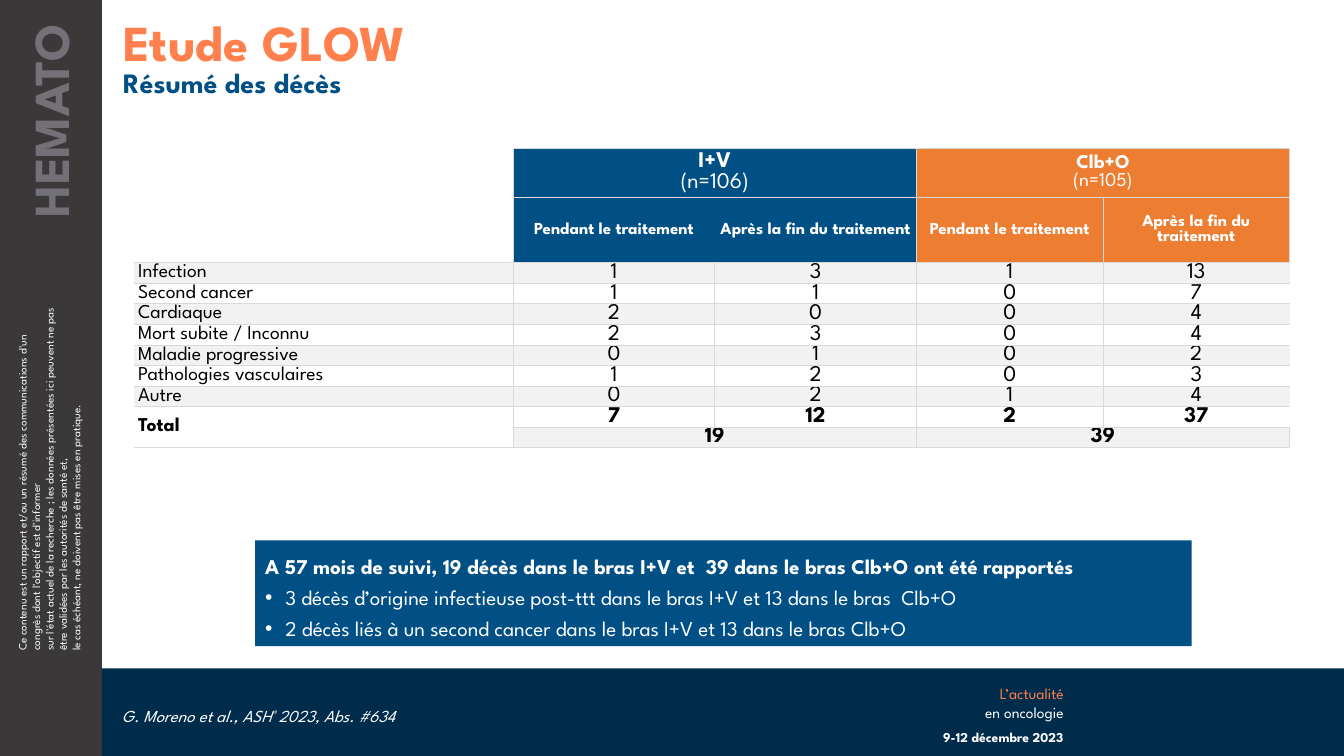
from dataclasses import dataclass
from typing import Optional

from lxml.etree import SubElement
from pptx import Presentation
from pptx.dml.color import RGBColor
from pptx.enum.shapes import MSO_SHAPE
from pptx.enum.text import MSO_ANCHOR, MSO_AUTO_SIZE, PP_ALIGN
from pptx.oxml import parse_xml
from pptx.oxml.ns import nsdecls, qn
from pptx.util import Inches, Pt


@dataclass(frozen=True)
class Theme:
    font: str = "League Spartan"
    white: str = "FFFFFF"
    black: str = "000000"
    coral: str = "FF7F4D"
    blue: str = "005086"
    orange: str = "ED7D31"
    navy: str = "002C4C"
    charcoal: str = "3A3839"
    gray: str = "737078"
    band: str = "F2F2F2"
    rule: str = "D9D9D9"
    title: float = 36
    subtitle: float = 20
    figure: float = 16
    callout: float = 15
    label: float = 14
    small: float = 12
    tagline: float = 11
    date: float = 9.7
    legal: float = 8


THEME = Theme()


@dataclass(frozen=True)
class Span:
    text: str
    size: float
    color: str = THEME.white
    bold: bool = False
    italic: bool = False
    raised: bool = False


@dataclass(frozen=True)
class Para:
    spans: tuple[Span, ...]
    align: PP_ALIGN = PP_ALIGN.LEFT
    spacing: float = 1.0
    before: float = 0
    bullet: bool = False


@dataclass(frozen=True)
class Block:
    box: tuple[float, float, float, float]
    paras: tuple[Para, ...]
    insets: tuple[float, float, float, float] = (0.1, 0.05, 0.1, 0.05)
    placeholder: Optional[int] = None
    rotation: float = 0
    fill: Optional[str] = None
    anchor: MSO_ANCHOR = MSO_ANCHOR.TOP


@dataclass(frozen=True)
class Arm:
    name: str
    patients: str
    color: str
    name_size: float
    column: int


BANDS = (((1.01, 6.63, 12.32, 0.87), THEME.navy), ((0, 0, 1.01, 7.5), THEME.charcoal))
LEGAL = ("Ce contenu est un rapport et/ou un résumé des communications d'un congrès dont l'objectif est d'informer \n"
         "sur l'état actuel de la recherche ; les données présentées ici peuvent ne pas être validées "
         "par les autorités de santé et, \n"
         "le cas échéant, ne doivent pas être mises en pratique.")
FINDINGS = ("3 décès d’origine infectieuse post-ttt dans le bras I+V et 13 dans le bras  Clb+O",
            "2 décès liés à un second cancer dans le bras I+V et 13 dans le bras Clb+O")
BLOCKS = (
    Block((1.02, 0, 12.31, 0.57), (Para((Span("Etude GLOW", THEME.title, THEME.coral, True),), spacing=0.9),),
          (0.2, 0.18, 0.1, 0), placeholder=0),
    Block((1.02, 0.57, 12.31, 0.37),
          (Para((Span("Résumé des décès", THEME.subtitle, THEME.blue, True),), spacing=0.9),),
          (0.2, 0.12, 0.1, 0), placeholder=1),
    Block((1.11, 6.94, 5.64, 0.27),
          (Para((Span("G. Moreno et al., ASH", THEME.small, italic=True),
                 Span("® ", THEME.small, italic=True, raised=True),
                 Span("2023, Abs. #634", THEME.small, italic=True)), spacing=0.9),),
          (0.1, 0.08, 0.1, 0), placeholder=3),
    Block((9.01, 7.17, 1.54, 0.27),
          (Para((Span("9-12 décembre 2023", THEME.date, bold=True),), PP_ALIGN.RIGHT, 0.9),),
          (0.1, 0.08, 0, 0), placeholder=2),
    Block((2.53, 5.36, 9.29, 1.05),
          (Para((Span("A 57 mois de suivi, 19 décès dans le bras I+V et  39 dans le bras Clb+O ont été rapportés",
                      THEME.callout, bold=True),)),
           *(Para((Span(finding, THEME.callout),), before=4.4, bullet=True) for finding in FINDINGS)),
          (0.1, 0.13, 0.1, 0.05), placeholder=4, fill=THEME.blue, anchor=MSO_ANCHOR.MIDDLE),
    Block((-1.31, 4.37, 3.6, 0.77), (Para((Span(LEGAL, THEME.legal),)),), rotation=270),
    Block((9.01, 6.74, 1.64, 0.47),
          (Para((Span("L’actualité\n", THEME.tagline, THEME.coral),
                 Span("en oncologie", THEME.tagline)), PP_ALIGN.RIGHT),)),
    Block((-1.04, 1.18, 3.07, 0.71),
          (Para((Span("HEMATO", THEME.title, THEME.gray, True),), PP_ALIGN.RIGHT),),
          (0.1, 0.05, 0.24, 0.05), rotation=270),
)
ARMS = (Arm("I+V", "(n=106)", THEME.blue, THEME.figure, 1), Arm("Clb+O", "(n=105)", THEME.orange, THEME.label, 3))
PERIODS = ("Pendant le traitement", "Après la fin du traitement")
DEATHS = (("Infection", 1, 3, 1, 13), ("Second cancer", 1, 1, 0, 7), ("Cardiaque", 2, 0, 0, 4),
          ("Mort subite / Inconnu", 2, 3, 0, 4), ("Maladie progressive", 0, 1, 0, 2),
          ("Pathologies vasculaires", 1, 2, 0, 3), ("Autre", 0, 2, 1, 4), ("Total", 7, 12, 2, 37),
          ("", 19, "", 39, ""))
COLUMN_WIDTHS = (3.76, 2, 2, 1.85, 1.85)
ROW_HEIGHTS = (0.45, 0.65) + (0.2,) * len(DEATHS)


def apply(target, values: dict) -> None:
    for name, value in values.items():
        setattr(target, name, value)


def add_bullet(paragraph) -> None:
    props = paragraph._p.get_or_add_pPr()
    apply_indent = {"marL": Inches(0.2), "indent": -Inches(0.2)}
    for name, value in apply_indent.items():
        props.set(name, str(value))
    color = SubElement(SubElement(props, qn("a:buClr")), qn("a:srgbClr"))
    color.set("val", THEME.white)
    SubElement(props, qn("a:buFont")).set("typeface", "Arial")
    SubElement(props, qn("a:buChar")).set("char", "•")


def remove_bullet(paragraph) -> None:
    props = paragraph._p.get_or_add_pPr()
    props.set("marL", "0")
    props.set("indent", "0")
    SubElement(props, qn("a:buNone"))


def write(frame, paras: tuple[Para, ...]) -> None:
    for index, para in enumerate(paras):
        paragraph = frame.add_paragraph() if index else frame.paragraphs[0]
        (add_bullet if para.bullet else remove_bullet)(paragraph)
        apply(paragraph, {"alignment": para.align, "line_spacing": para.spacing,
                          "space_before": Pt(para.before), "space_after": Pt(0)})
        for span in para.spans:
            for line, text in enumerate(span.text.split("\n")):
                if line:
                    paragraph.add_line_break()
                if not text:
                    continue
                run = paragraph.add_run()
                run.text = text
                apply(run.font, {"name": THEME.font, "size": Pt(span.size),
                                 "bold": span.bold, "italic": span.italic})
                run.font.color.rgb = RGBColor.from_string(span.color)
                if span.raised:
                    run.font._element.set("baseline", "30000")


def add_band(slide, box: tuple[float, ...], color: str, depth: int) -> None:
    """Place a plain rectangle behind the slide's text."""
    band = slide.shapes.add_shape(MSO_SHAPE.RECTANGLE, *map(Inches, box))
    band.shadow.inherit = False
    band.fill.solid()
    band.fill.fore_color.rgb = RGBColor.from_string(color)
    band.line.fill.background()
    slide.shapes._spTree.insert(2 + depth, band._element)


def add_block(slide, block: Block) -> None:
    left, top, width, height = map(Inches, block.box)
    if block.placeholder is None:
        shape = slide.shapes.add_textbox(left, top, width, height)
    else:
        shape = slide.placeholders[block.placeholder]
    apply(shape, {"left": left, "top": top, "width": width, "height": height, "rotation": block.rotation})
    if block.fill:
        shape.fill.solid()
        shape.fill.fore_color.rgb = RGBColor.from_string(block.fill)
    margins = zip(("margin_left", "margin_top", "margin_right", "margin_bottom"), map(Inches, block.insets))
    apply(shape.text_frame, {"word_wrap": True, "auto_size": MSO_AUTO_SIZE.NONE,
                             "vertical_anchor": block.anchor, **dict(margins)})
    write(shape.text_frame, block.paras)


def set_borders(cell, hidden: str) -> None:
    """Rule the four sides, except those whose letters are in hidden."""
    for index, side in enumerate("LRTB"):
        paint = ("<a:noFill/>" if side in hidden
                 else f'<a:solidFill><a:srgbClr val="{THEME.rule}"/></a:solidFill>')
        line = parse_xml(f'<a:ln{side} {nsdecls("a")} w="{Pt(0.75)}">{paint}</a:ln{side}>')
        cell._tc.get_or_add_tcPr().insert(index, line)


def format_cell(cell, spans: tuple[Span, ...], fill: Optional[str], pad: float,
                align: PP_ALIGN = PP_ALIGN.CENTER, hidden: str = "") -> None:
    apply(cell, {"margin_left": Inches(0.04), "margin_right": Inches(0.04), "margin_top": Inches(pad),
                 "margin_bottom": Inches(pad), "vertical_anchor": MSO_ANCHOR.MIDDLE})
    if fill:
        cell.fill.solid()
        cell.fill.fore_color.rgb = RGBColor.from_string(fill)
    else:
        cell.fill.background()
    set_borders(cell, hidden)
    write(cell.text_frame, tuple(Para((span,), align) for span in spans))


def add_deaths_table(slide) -> None:
    frame = slide.shapes.add_table(len(ROW_HEIGHTS), len(COLUMN_WIDTHS), *map(Inches, (1.33, 1.47, 11.46, 2.9)))
    table = frame.table
    apply(table, {"first_row": False, "horz_banding": False})
    for column, width in zip(table.columns, COLUMN_WIDTHS):
        column.width = Inches(width)
    for row, height in zip(table.rows, ROW_HEIGHTS):
        row.height = Inches(height)
    for row in (0, 1):
        format_cell(table.cell(row, 0), (Span("", THEME.small),), None, 0, hidden="LRT" if row else "LRTB")
    for arm in ARMS:
        heading = (Span(arm.name, arm.name_size, bold=True), Span(arm.patients, arm.name_size))
        format_cell(table.cell(0, arm.column), heading, arm.color, 0.04)
        for offset, period in enumerate(PERIODS):
            hidden = "LR"[1 - offset] if arm.color == THEME.blue else ""
            format_cell(table.cell(1, arm.column + offset), (Span(period, THEME.small, bold=True),),
                        arm.color, 0.04, hidden=hidden)
        for row in (0, len(ROW_HEIGHTS) - 1):
            table.cell(row, arm.column).merge(table.cell(row, arm.column + 1))
    for row, values in enumerate(DEATHS, start=2):
        fill = THEME.white if row % 2 else THEME.band
        bold = row >= len(ROW_HEIGHTS) - 2
        for column, value in enumerate(values):
            size, align = (THEME.figure, PP_ALIGN.CENTER) if column else (THEME.label, PP_ALIGN.LEFT)
            hidden = {0: "L", len(values) - 1: "R"}.get(column, "")
            format_cell(table.cell(row, column), (Span(str(value), size, THEME.black, bold),),
                        fill, 0, align, hidden)
    last = len(ROW_HEIGHTS) - 1
    table.cell(last - 1, 0).merge(table.cell(last, 0))


def main() -> None:
    deck = Presentation()
    apply(deck, {"slide_width": Inches(13.33), "slide_height": Inches(7.5)})
    slide = deck.slides.add_slide(deck.slide_layouts.get_by_name("Comparison"))
    for depth, (box, color) in enumerate(BANDS):
        add_band(slide, box, color, depth)
    for block in BLOCKS:
        add_block(slide, block)
    add_deaths_table(slide)
    deck.save("out.pptx")


if __name__ == "__main__":
    main()
